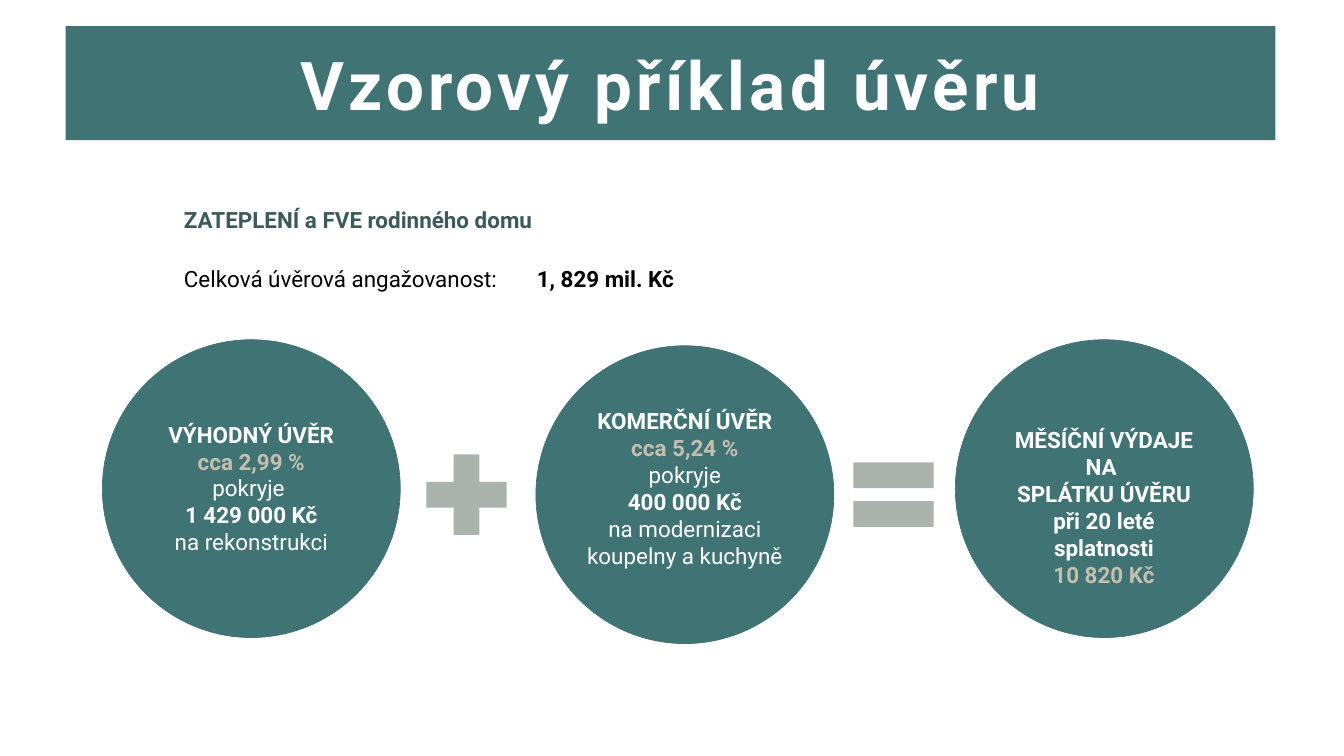
import pptx
import pptx.dml.color
import pptx.enum.shapes
import pptx.enum.text
import pptx.util
from lxml import etree

Inches = pptx.util.Inches
Pt = pptx.util.Pt
SHAPE = pptx.enum.shapes.MSO_SHAPE
CENTER = pptx.enum.text.PP_ALIGN.CENTER

FONT = "Roboto"
TEAL, DARK_TEAL, GRAY = "407374", "3C5A59", "ABB3AD"
SAND, WHITE, BLACK = "C7BFAD", "FFFFFF", "000000"
BODY_SIZE = 32
CIRCLE_SIZE = 5.91
SIGN_SIZE, SIGN_TOP = 2.17, 8.73

TITLE = "Vzorový příklad úvěru"

# Each paragraph is a list of runs: (text, colour, bold)
INTRO = [
    [("ZATEPLENÍ a FVE rodinného domu", DARK_TEAL, True)],
    [("Celková úvěrová angažovanost:\t", BLACK, False), ("1, 829 mil. Kč", BLACK, True)],
]

# Circle left and top, text box (left, top, width, height), paragraphs
CIRCLES = [
    (2.03, 6.74, (3.11, 8.3, 3.75, 2.79), [
        [("VÝHODNÝ ÚVĚR", WHITE, True)],
        [("cca 2,99 %", SAND, True)],
        [("pokryje ", WHITE, False)],
        [("1 429 000 Kč", WHITE, True)],
        [("na rekonstrukci", WHITE, False)],
    ]),
    (10.63, 6.86, (11.34, 8.03, 4.49, 3.33), [
        [("KOMERČNÍ ÚVĚR", WHITE, True)],
        [("cca 5,24 %", SAND, True)],
        [("pokryje", WHITE, False)],
        [("400 000 Kč", WHITE, True)],
        [("na modernizaci koupelny a kuchyně", WHITE, False)],
    ]),
    (18.95, 6.74, (19.78, 8.41, 4.24, 3.33), [
        [("MĚSÍČNÍ VÝDAJE NA ", WHITE, True)],
        [("SPLÁTKU ÚVĚRU při 20 leté splatnosti", WHITE, True)],
        [("10 820 Kč", SAND, True)],
    ]),
]

SIGNS = [(SHAPE.MATH_PLUS, 8.17), (SHAPE.MATH_EQUAL, 16.64)]


def color(hex_string):
    return pptx.dml.color.RGBColor.from_string(hex_string)


def add_filled_shape(slide, kind, box, fill, outlined=False):
    shape = slide.shapes.add_shape(kind, *map(Inches, box))
    shape.shadow.inherit = False
    shape.fill.solid()
    shape.fill.fore_color.rgb = color(fill)
    if outlined:
        shape.line.color.rgb = color(fill)
        shape.line.width = Pt(1)
    else:
        shape.line.fill.background()
    return shape


def add_run(paragraph, text, text_color, bold, size=BODY_SIZE):
    run = paragraph.add_run()
    run.text = text
    run.font.name = FONT
    run.font.size = Pt(size)
    run.font.bold = bold
    run.font.color.rgb = color(text_color)
    return run


def add_text(slide, box, paragraphs, alignment=None):
    """Add a wrapping text box and return its paragraphs."""
    frame = slide.shapes.add_textbox(*map(Inches, box)).text_frame
    frame.word_wrap = True
    for index, runs in enumerate(paragraphs):
        paragraph = frame.paragraphs[0] if index == 0 else frame.add_paragraph()
        paragraph.alignment = alignment
        for run in runs:
            add_run(paragraph, *run)
    return frame.paragraphs


def add_tab_stop(paragraph, position):
    tab_list = etree.SubElement(paragraph._p.get_or_add_pPr(), pptx.oxml.ns.qn("a:tabLst"))
    etree.SubElement(tab_list, pptx.oxml.ns.qn("a:tab"), pos=str(Inches(position)), algn="l")


def add_title(slide):
    banner = add_filled_shape(slide, SHAPE.RECTANGLE, (1.3, 0.52, 24, 2.26), TEAL)
    banner.text_frame.vertical_anchor = pptx.enum.text.MSO_ANCHOR.MIDDLE
    paragraph = banner.text_frame.paragraphs[0]
    paragraph.alignment = CENTER
    run = add_run(paragraph, TITLE, WHITE, True, size=96)
    run._r.get_or_add_rPr().set("spc", "600")


def add_intro(slide):
    heading, total = add_text(slide, (3.55, 3.98, 13.35, 1.84), INTRO)
    heading.line_spacing = total.line_spacing = 1.1
    total.space_before = Pt(42)
    add_tab_stop(total, 7)


def main():
    presentation = pptx.Presentation()
    presentation.slide_width = Inches(26.66)
    presentation.slide_height = Inches(15)
    slide = presentation.slides.add_slide(presentation.slide_layouts[6])

    add_intro(slide)
    add_title(slide)
    for left, top, text_box, paragraphs in CIRCLES:
        circle_box = (left, top, CIRCLE_SIZE, CIRCLE_SIZE)
        add_filled_shape(slide, SHAPE.OVAL, circle_box, TEAL, outlined=True)
        add_text(slide, text_box, paragraphs, CENTER)
    for kind, left in SIGNS:
        add_filled_shape(slide, kind, (left, SIGN_TOP, SIGN_SIZE, SIGN_SIZE), GRAY)

    presentation.save("out.pptx")


if __name__ == "__main__":
    main()
